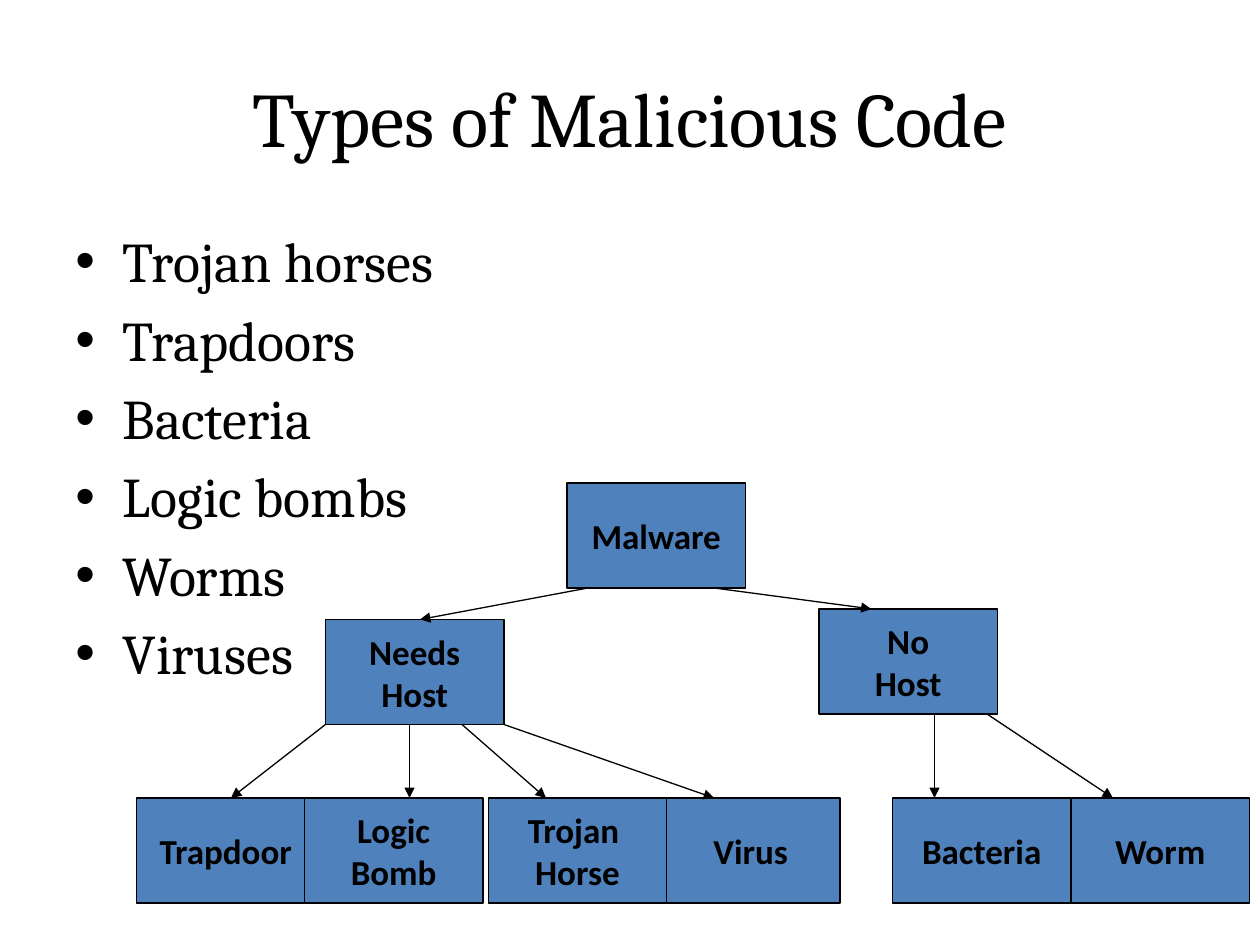
from lxml import etree
from pptx import Presentation
from pptx.dml.color import RGBColor
from pptx.enum.shapes import MSO_CONNECTOR, MSO_SHAPE
from pptx.enum.text import MSO_ANCHOR, PP_ALIGN
from pptx.oxml.ns import qn
from pptx.util import Pt

CENTER, LEFT = PP_ALIGN.CENTER, PP_ALIGN.LEFT
MIDDLE, TOP = MSO_ANCHOR.MIDDLE, MSO_ANCHOR.TOP
RECTANGLE, STRAIGHT = MSO_SHAPE.RECTANGLE, MSO_CONNECTOR.STRAIGHT

COLORS = {"ink": "000000", "box": "4F81BD"}
BOX_WIDTH, BOX_HEIGHT = 102, 60
LINE_WIDTH = 0.75
LEAF_TOP = 456
NEEDS_TOP, NO_HOST_TOP, ROOT_TOP = 354, 348, 276
NEEDS_BOTTOM, NO_HOST_BOTTOM, ROOT_BOTTOM = (
    top + BOX_HEIGHT for top in (NEEDS_TOP, NO_HOST_TOP, ROOT_TOP))

CODE_TYPES = ["Trojan horses", "Trapdoors", "Bacteria",
              "Logic bombs", "Worms", "Viruses"]

# label, left, top
BOXES = [
    ("Trapdoor", 78, LEAF_TOP),
    ("Logic\nBomb", 174, LEAF_TOP),
    ("Virus", 378, LEAF_TOP),
    ("Worm", 612, LEAF_TOP),
    ("Bacteria", 510, LEAF_TOP),
    ("No\nHost", 468, NO_HOST_TOP),
    ("Needs\nHost", 186, NEEDS_TOP),
    ("Malware", 324, ROOT_TOP),
    ("Trojan \nHorse", 279, LEAF_TOP),
]

# start x, start y, end x, end y
ARROWS = [
    (336, ROOT_BOTTOM, 240, NEEDS_TOP),
    (408, ROOT_BOTTOM, 498, NO_HOST_TOP),
    (186, NEEDS_BOTTOM, 132, LEAF_TOP),
    (234, NEEDS_BOTTOM, 234, LEAF_TOP),
    (264, NEEDS_BOTTOM, 312, LEAF_TOP),
    (288, NEEDS_BOTTOM, 408, LEAF_TOP),
    (534, NO_HOST_BOTTOM, 534, LEAF_TOP),
    (564, NO_HOST_BOTTOM, 636, LEAF_TOP),
]


def color(name):
    return RGBColor.from_string(COLORS[name])


def write(frame, text, font_name, size, align, anchor, bold=False):
    frame.text = text
    frame.vertical_anchor = anchor
    for paragraph in frame.paragraphs:
        paragraph.alignment = align
        font = paragraph.font
        font.name, font.size, font.bold = font_name, Pt(size), bold
        font.color.rgb = color("ink")


def add_text(slide, text, bounds, size, align, anchor):
    frame = slide.shapes.add_textbox(*map(Pt, bounds)).text_frame
    frame.word_wrap = True
    write(frame, text, "Cambria", size, align, anchor)
    return frame


def add_bullet(paragraph):
    """Give a paragraph a hanging bullet and space of 20% above it."""
    properties = paragraph._p.get_or_add_pPr()
    properties.set("marL", str(Pt(27)))
    properties.set("indent", str(Pt(-27)))
    spacing = etree.Element(qn("a:spcBef"))
    etree.SubElement(spacing, qn("a:spcPct"), val="20000")
    bullet_font = etree.Element(qn("a:buFont"), typeface="Arial")
    bullet = etree.Element(qn("a:buChar"), char="•")
    for position, element in enumerate((spacing, bullet_font, bullet)):
        properties.insert(position, element)


def add_box(slide, label, left, top):
    box = slide.shapes.add_shape(
        RECTANGLE, Pt(left), Pt(top), Pt(BOX_WIDTH), Pt(BOX_HEIGHT))
    box.shadow.inherit = False
    box.fill.solid()
    box.fill.fore_color.rgb = color("box")
    box.line.color.rgb = color("ink")
    box.line.width = Pt(LINE_WIDTH)
    box.text_frame.word_wrap = False
    write(box.text_frame, label, "Calibri", 20, CENTER, MIDDLE, bold=True)


def add_arrow(slide, ends):
    arrow = slide.shapes.add_connector(STRAIGHT, *map(Pt, ends))
    arrow.line.color.rgb = color("ink")
    arrow.line.width = Pt(LINE_WIDTH)
    etree.SubElement(arrow.line._get_or_add_ln(), qn("a:tailEnd"), type="triangle")
    etree.SubElement(arrow._element.spPr, qn("a:effectLst"))


def main():
    presentation = Presentation()
    presentation.slide_width, presentation.slide_height = Pt(720), Pt(540)
    slide = presentation.slides.add_slide(presentation.slide_layouts[6])

    add_text(slide, "Types of Malicious Code", (36, 21.6, 648, 90), 44, CENTER, MIDDLE)
    type_list = add_text(slide, "\n".join(CODE_TYPES), (36, 126, 648, 356.4),
                         32, LEFT, TOP)
    for paragraph in type_list.paragraphs:
        add_bullet(paragraph)

    for label, left, top in BOXES:
        add_box(slide, label, left, top)
    for ends in ARROWS:
        add_arrow(slide, ends)

    presentation.save("out.pptx")


if __name__ == "__main__":
    main()
